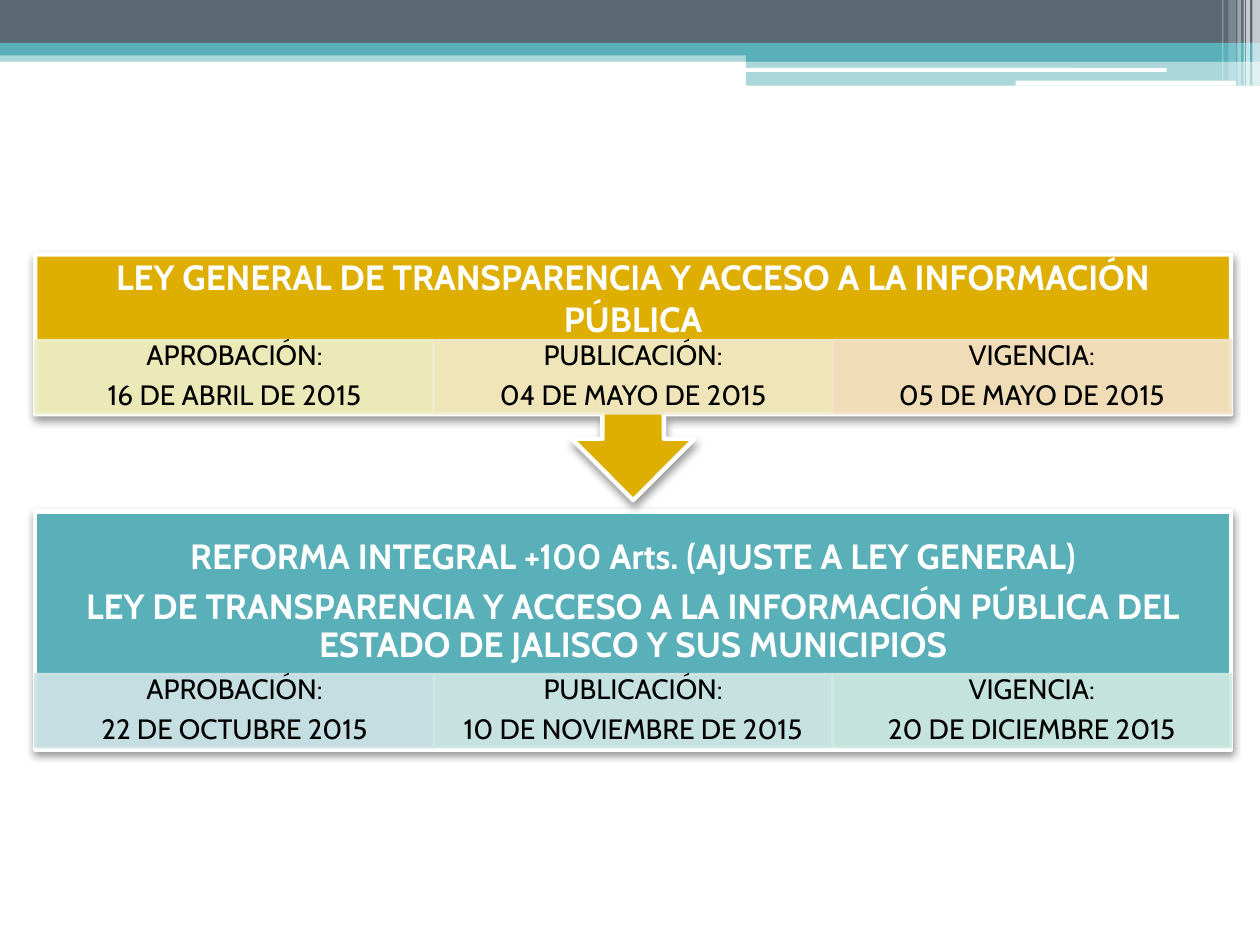
from dataclasses import dataclass
from typing import NamedTuple

from lxml.etree import SubElement
from pptx import Presentation
from pptx.dml.color import RGBColor as RGB
from pptx.enum.shapes import MSO_SHAPE as Shp
from pptx.enum.text import MSO_ANCHOR as Anchor, PP_ALIGN as Align
from pptx.oxml.ns import qn
from pptx.util import Inches, Pt


@dataclass(frozen=True)
class Theme:
    font: str = "Cabin"
    heading_pt: float = 20
    date_pt: float = 16
    after_ratio: float = 0.35
    white: str = "FFFFFF"
    black: str = "000000"
    slate: str = "5B6973"
    teal: str = "59B0B9"
    gold: str = "DEAE00"


T = Theme()


class Box(NamedTuple):
    left: float
    top: float
    width: float
    height: float

    def emu(self) -> list:
        return [Inches(v) for v in self]


class Band(NamedTuple):
    box: Box
    color: str
    alpha: int = 100
    kind: Shp = Shp.RECTANGLE


class DateCell(NamedTuple):
    label: str
    date: str
    color: str


class Law(NamedTuple):
    panel: Box
    kind: Shp
    color: str
    heading_box: Box
    heading: list[str]
    spacing: float
    dates_top: float
    dates: list[DateCell]


LEFT, WIDTH = 0.28, 9.49
DATE_HEIGHT = 0.58

BANDS = [
    Band(Box(0, 0.4, 10, 0.09), T.teal, 50),
    Band(Box(0, 0, 10, 0.34), T.slate),
    Band(Box(0, 0.34, 10, 0.1), T.teal),
    Band(Box(5.92, 0.39, 4.08, 0.1), T.teal),
    Band(Box(5.92, 0.48, 4.08, 0.2), T.teal, 50),
    Band(Box(5.91, 0.54, 3.35, 0.03), T.white, kind=Shp.ROUNDED_RECTANGLE),
    Band(Box(8.06, 0.64, 1.75, 0.04), T.white, kind=Shp.ROUNDED_RECTANGLE),
    Band(Box(9.94, 0, 0.06, 0.68), T.white, 65),
    Band(Box(9.89, 0, 0.03, 0.68), T.white, 65),
    Band(Box(9.87, 0, 0.01, 0.68), T.white, 60),
    Band(Box(9.82, 0, 0.03, 0.68), T.white, 40),
    Band(Box(9.75, 0, 0.06, 0.64), T.white, 20),
    Band(Box(9.7, 0, 0.01, 0.64), T.white, 30),
]

LAWS = [
    Law(
        Box(LEFT, 4.06, WIDTH, 1.89), Shp.RECTANGLE, T.teal,
        Box(LEFT, 4.27, WIDTH, 1.02),
        ["REFORMA INTEGRAL +100 Arts. (AJUSTE A LEY GENERAL)",
         "LEY DE TRANSPARENCIA Y ACCESO A LA INFORMACIÓN PÚBLICA DEL "
         "ESTADO DE JALISCO Y SUS MUNICIPIOS"],
        0.9, 5.35,
        [DateCell("APROBACIÓN:", "22 DE OCTUBRE 2015", "D1E4E6"),
         DateCell("PUBLICACIÓN:", "10 DE NOVIEMBRE DE 2015", "D1E7E5"),
         DateCell("VIGENCIA:", "20 DE DICIEMBRE 2015", "D0E9E1")],
    ),
    Law(
        Box(LEFT, 2.02, WIDTH, 1.95), Shp.DOWN_ARROW_CALLOUT, T.gold,
        Box(LEFT, 2.02, WIDTH, 0.68),
        ["LEY GENERAL DE TRANSPARENCIA Y ACCESO A LA INFORMACIÓN PÚBLICA"],
        1.0, 2.7,
        [DateCell("APROBACIÓN:", "16 DE ABRIL DE 2015", "EEF0CC"),
         DateCell("PUBLICACIÓN:", "04 DE MAYO DE 2015", "F1EBCC"),
         DateCell("VIGENCIA:", "05 DE MAYO DE 2015", "F2E3CB")],
    ),
]


def add_alpha(color, percent: float) -> None:
    SubElement(color, qn("a:alpha"), val=str(int(percent * 1000)))


def add_filled(slide, kind: Shp, box: Box, color: str, alpha: int = 100,
               line: str | None = None, line_pt: float = 0):
    s = slide.shapes.add_shape(kind, *box.emu())
    s.shadow.inherit = False
    s.fill.solid()
    s.fill.fore_color.rgb = RGB.from_string(color)
    if line:
        s.line.color.rgb = RGB.from_string(line)
        s.line.width = Pt(line_pt)
    else:
        s.line.fill.background()
    if alpha < 100:
        for c in list(s.element.spPr.iter(qn("a:srgbClr"))):
            add_alpha(c, alpha)
    return s


def add_shadow(s) -> None:
    effects = s.element.spPr.find(qn("a:effectLst"))
    shadow = SubElement(effects, qn("a:outerShdw"), blurRad=str(Pt(4.1)),
                        dist=str(Pt(2)), dir="5400000", rotWithShape="0")
    add_alpha(SubElement(shadow, qn("a:srgbClr"), val=T.black), 40)


def write(s, lines: list[str], size: float, color: str, inset_x: float,
          inset_y: float, bold: bool = False, spacing: float = 0.9) -> None:
    tf = s.text_frame
    tf.word_wrap = True
    tf.vertical_anchor = Anchor.MIDDLE
    tf.margin_left = tf.margin_right = Inches(inset_x)
    tf.margin_top = tf.margin_bottom = Inches(inset_y)
    for i, text in enumerate(lines):
        p = tf.paragraphs[0] if i == 0 else tf.add_paragraph()
        p.text = text
        p.alignment = Align.CENTER
        p.line_spacing = spacing
        p.space_after = Pt(size * T.after_ratio if len(lines) > 1 else 0)
        p.font.name = T.font
        p.font.size = Pt(size)
        p.font.bold = bold
        p.font.color.rgb = RGB.from_string(color)


def add_law(slide, law: Law) -> None:
    panel = add_filled(slide, law.kind, law.panel, law.color, line=T.white, line_pt=2.5)
    add_shadow(panel)
    heading = slide.shapes.add_textbox(*law.heading_box.emu())
    write(heading, law.heading, T.heading_pt, T.white, 0.16, 0.16, True, law.spacing)
    width = WIDTH / len(law.dates)
    for i, cell in enumerate(law.dates):
        box = Box(LEFT + i * width, law.dates_top, width, DATE_HEIGHT)
        s = add_filled(slide, Shp.RECTANGLE, box, cell.color, 90, cell.color, 1.5)
        write(s, [cell.label, cell.date], T.date_pt, T.black, 0.12, 0.02)


def main() -> None:
    prs = Presentation()
    prs.slide_width, prs.slide_height = Inches(10), Inches(7.5)
    slide = prs.slides.add_slide(prs.slide_layouts[6])
    for band in BANDS:
        add_filled(slide, band.kind, band.box, band.color, band.alpha)
    for law in LAWS:
        add_law(slide, law)
    prs.save("out.pptx")


if __name__ == "__main__":
    main()
